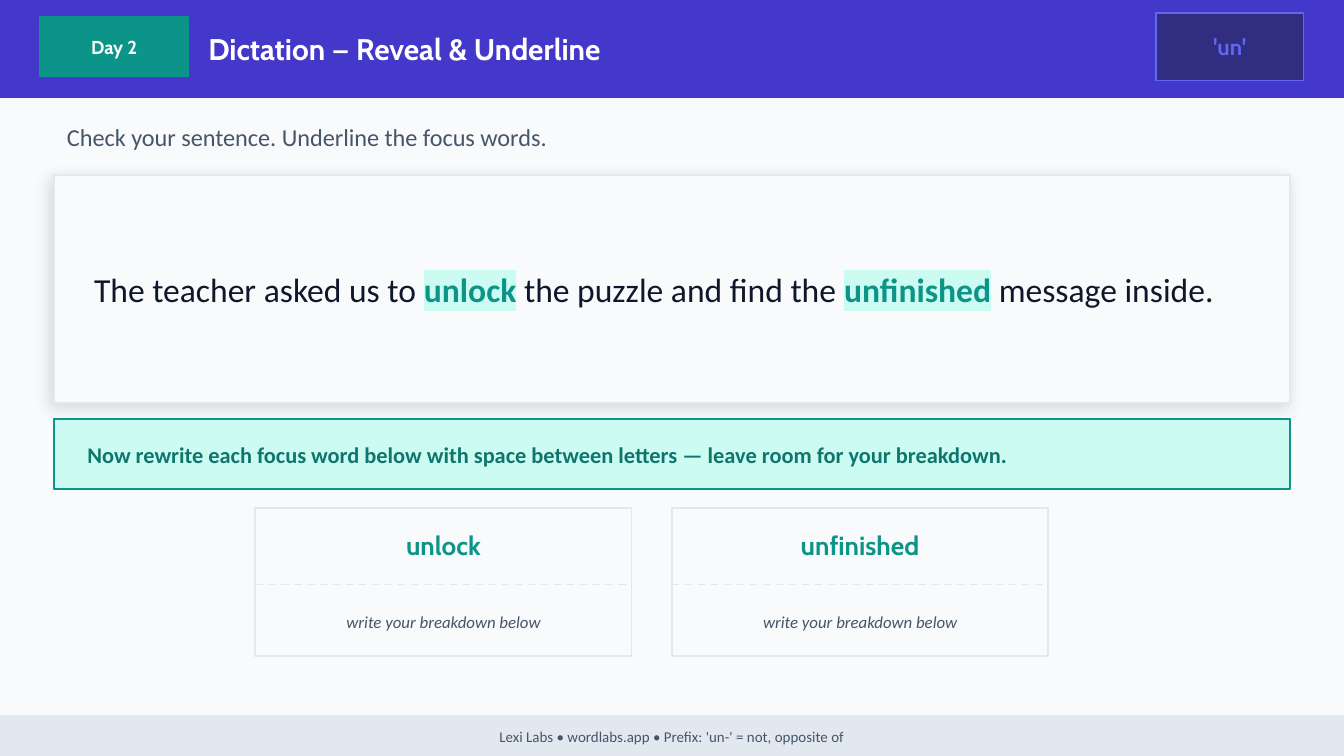
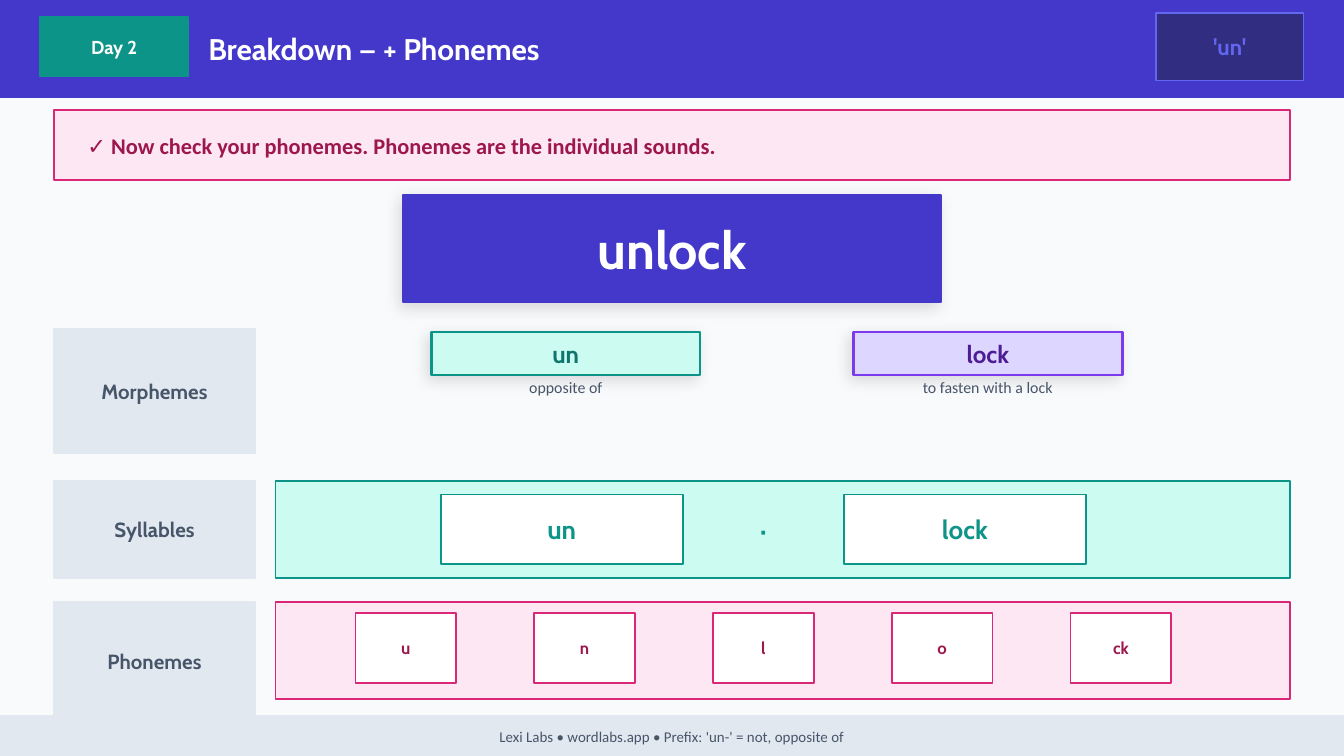
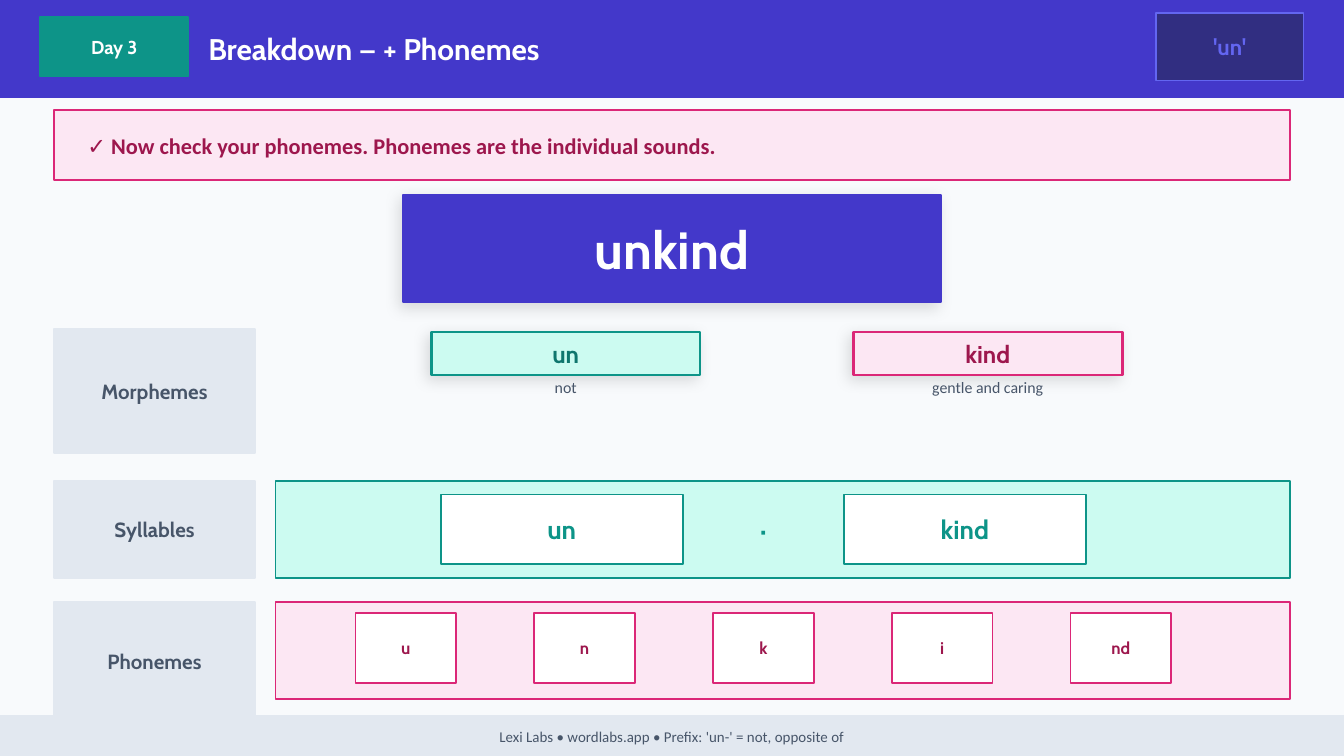
from lxml import etree
from pptx import Presentation
from pptx.dml.color import RGBColor
from pptx.enum import dml, shapes, text
from pptx.oxml import ns
from pptx.util import Inches, Pt

INDIGO = RGBColor(0x43, 0x38, 0xCA)
INDIGO_DARK = RGBColor(0x31, 0x2E, 0x81)
INDIGO_LIGHT = RGBColor(0x63, 0x66, 0xF1)
TEAL = RGBColor(0x0D, 0x94, 0x88)
TEAL_DARK = RGBColor(0x0F, 0x76, 0x6E)
TEAL_PALE = RGBColor(0xCC, 0xFB, 0xF1)
PINK = RGBColor(0xDB, 0x27, 0x77)
PINK_DARK = RGBColor(0x9D, 0x17, 0x4D)
PINK_PALE = RGBColor(0xFC, 0xE7, 0xF3)
VIOLET = RGBColor(0x7C, 0x3A, 0xED)
VIOLET_DARK = RGBColor(0x4C, 0x1D, 0x95)
VIOLET_PALE = RGBColor(0xDD, 0xD6, 0xFE)
INK = RGBColor(0x0F, 0x17, 0x2A)
SLATE = RGBColor(0x47, 0x55, 0x69)
MIST = RGBColor(0xE2, 0xE8, 0xF0)
PAPER = RGBColor(0xF8, 0xFA, 0xFC)
WHITE = RGBColor(0xFF, 0xFF, 0xFF)

HEADING, BODY = "Cabin", "Calibri"
LEFT, WIDTH = 0.4, 9.2
CENTER, START = text.PP_ALIGN.CENTER, text.PP_ALIGN.LEFT

# Each scheme is fill, outline, text
TEAL_SCHEME = (TEAL_PALE, TEAL, TEAL_DARK)
PINK_SCHEME = (PINK_PALE, PINK, PINK_DARK)
VIOLET_SCHEME = (VIOLET_PALE, VIOLET, VIOLET_DARK)


def add_run(paragraph, words, size, color, font=BODY, bold=False, italic=False, highlight=None):
    run = paragraph.add_run()
    run.text = words
    run.font.size = Pt(size)
    run.font.bold = bold
    run.font.italic = italic
    run.font.color.rgb = color
    if highlight is not None:
        mark = etree.Element(ns.qn("a:highlight"))
        etree.SubElement(mark, ns.qn("a:srgbClr"), val=str(highlight))
        run.font.fill._xPr.find(ns.qn("a:solidFill")).addnext(mark)
    run.font.name = font


def set_frame(shape, align=CENTER, inset=0, anchor=text.MSO_ANCHOR.MIDDLE):
    """Prepare the text frame and return its first paragraph."""
    frame = shape.text_frame
    frame.word_wrap = True
    frame.vertical_anchor = anchor
    frame.margin_left = Inches(inset)
    frame.margin_right = frame.margin_top = frame.margin_bottom = 0
    frame.paragraphs[0].alignment = align
    return frame.paragraphs[0]


def add_box(slide, area, fill, outline, weight=1, shadow=False):
    box = slide.shapes.add_shape(shapes.MSO_SHAPE.RECTANGLE, *map(Inches, area))
    box.fill.solid()
    box.fill.fore_color.rgb = fill
    box.line.color.rgb = outline
    box.line.width = Pt(weight)
    box.shadow.inherit = False
    if shadow:
        effects = box._element.spPr.find(ns.qn("a:effectLst"))
        outer = etree.SubElement(effects, ns.qn("a:outerShdw"), blurRad=str(Pt(8)),
                                 dist=str(Pt(3)), dir=str(135 * 60000),
                                 algn="bl", rotWithShape="0")
        black = etree.SubElement(outer, ns.qn("a:srgbClr"), val="000000")
        etree.SubElement(black, ns.qn("a:alpha"), val="12000")
    return box


def add_tile(slide, area, words, scheme, size, weight=1, shadow=False):
    """A filled box with a centred bold heading inside."""
    fill, outline, color = scheme
    tile = add_box(slide, area, fill, outline, weight, shadow)
    add_run(set_frame(tile), words, size, color, HEADING, bold=True)


def add_label(slide, area, words, size, color, font=BODY, bold=False, italic=False,
              align=CENTER, inset=0, anchor=text.MSO_ANCHOR.MIDDLE):
    label = slide.shapes.add_textbox(*map(Inches, area))
    add_run(set_frame(label, align, inset, anchor), words, size, color, font, bold, italic)


def add_prompt(slide, top, words, scheme):
    fill, outline, color = scheme
    prompt = add_box(slide, (LEFT, top, WIDTH, 0.52), fill, outline)
    add_run(set_frame(prompt, START, 0.25), words, 12, color, bold=True)


def add_divider(slide, left, top, width):
    divider = slide.shapes.add_connector(shapes.MSO_CONNECTOR.STRAIGHT, Inches(left),
                                         Inches(top), Inches(left + width), Inches(top))
    divider.line.color.rgb = MIST
    divider.line.width = Pt(1)
    divider.line.dash_style = dml.MSO_LINE.DASH
    etree.SubElement(divider._element.spPr, ns.qn("a:effectLst"))


def centered_lefts(center, width, gap, count):
    """Left edges of equal items spread evenly about a centre."""
    first = center - (count * width + (count - 1) * gap) / 2
    return [first + i * (width + gap) for i in range(count)]


def add_lesson_slide(deck, day, title):
    """A slide with the shared header band and footer."""
    slide = deck.slides.add_slide(deck.slide_layouts[6])
    slide.background.fill.solid()
    slide.background.fill.fore_color.rgb = PAPER
    add_box(slide, (0, 0, 10, 0.72), INDIGO, INDIGO)
    add_tile(slide, (0.3, 0.13, 1.1, 0.44), day, (TEAL, TEAL, WHITE), 10)
    add_label(slide, (1.55, 0, 8.1, 0.72), title, 16, WHITE, HEADING, bold=True, align=START)
    add_tile(slide, (8.6, 0.1, 1.1, 0.5), "'un'", (INDIGO_DARK, INDIGO_LIGHT, INDIGO_LIGHT), 12)
    footer = add_box(slide, (0, 5.33, 10, 0.3), MIST, MIST)
    add_run(set_frame(footer), "Lexi Labs • wordlabs.app • Prefix: 'un-' = not, opposite of",
            8, SLATE)
    return slide


def add_sentence(slide, parts, focus_words):
    panel = add_box(slide, (LEFT, 1.3, WIDTH, 1.7), PAPER, MIST, shadow=True)
    sentence = set_frame(panel, START, 0.3)
    for part in parts:
        if part in focus_words:
            add_run(sentence, part, 18, TEAL, bold=True, highlight=TEAL_PALE)
        else:
            add_run(sentence, part, 18, INK)


def add_word_card(slide, left, word):
    top, width = 3.78, 2.8
    add_box(slide, (left, top, width, 1.1), PAPER, MIST)
    add_divider(slide, left, top + 0.57, width)
    add_label(slide, (left, top, width, 0.55), word, 14, TEAL, HEADING, bold=True)
    add_label(slide, (left, top + 0.6, width, 0.5), "write your breakdown below", 9, SLATE,
              italic=True)


def add_dictation(deck, day, parts, focus_words):
    slide = add_lesson_slide(deck, day, "Dictation — Reveal & Underline")
    add_label(slide, (LEFT, 0.82, WIDTH, 0.4), "Check your sentence. Underline the focus words.",
              13, SLATE, align=START, inset=0.1)
    add_sentence(slide, parts, focus_words)
    add_prompt(slide, 3.12, "Now rewrite each focus word below with space between letters "
               "— leave room for your breakdown.", TEAL_SCHEME)
    for left, word in zip(centered_lefts(4.85, 2.8, 0.3, len(focus_words)), focus_words):
        add_word_card(slide, left, word)


def add_row_label(slide, top, height, words):
    add_tile(slide, (LEFT, top, 1.5, height), words, (MIST, MIST, SLATE), 11)


def add_morphemes(slide, morphemes):
    add_row_label(slide, 2.45, 0.92, "Morphemes")
    lefts = centered_lefts(5.78, 2, 1.14, len(morphemes))
    for left, (morpheme, meaning, scheme) in zip(lefts, morphemes):
        add_tile(slide, (left, 2.47, 2, 0.32), morpheme, scheme, 13, 1.5, shadow=True)
        add_label(slide, (left, 2.81, 2, 0.22), meaning, 8.5, SLATE,
                  anchor=text.MSO_ANCHOR.TOP)


def add_syllables(slide, syllables):
    top, width, gap = 3.58, 1.8, 1.2
    add_row_label(slide, top, 0.72, "Syllables")
    add_box(slide, (2.05, top, 7.55, 0.72), TEAL_PALE, TEAL)
    for i, left in enumerate(centered_lefts(5.68, width, gap, len(syllables))):
        if i:
            add_label(slide, (left - gap, top + 0.1, gap, 0.52), "·", 16, TEAL, HEADING,
                      bold=True)
        add_tile(slide, (left, top + 0.1, width, 0.52), syllables[i], (WHITE, TEAL, TEAL), 14)


def add_phonemes(slide, phonemes):
    top, width = 4.48, 0.75
    add_row_label(slide, top, 0.88, "Phonemes")
    add_box(slide, (2.05, top, 7.55, 0.72), PINK_PALE, PINK)
    for left, sound in zip(centered_lefts(5.68, width, 0.58, len(phonemes)), phonemes):
        add_tile(slide, (left, top + 0.08, width, 0.52), sound, (WHITE, PINK, PINK_DARK), 9)


def add_breakdown(deck, day, word, morphemes, phonemes):
    slide = add_lesson_slide(deck, day, "Breakdown — + Phonemes")
    add_prompt(slide, 0.82, "✓ Now check your phonemes. Phonemes are the individual sounds.",
               PINK_SCHEME)
    add_tile(slide, (3, 1.45, 4, 0.8), word, (INDIGO, INDIGO, WHITE), 28, shadow=True)
    add_morphemes(slide, morphemes)
    add_syllables(slide, [morpheme for morpheme, _, _ in morphemes])
    add_phonemes(slide, phonemes)


def main():
    deck = Presentation()
    deck.slide_width = Inches(10)
    deck.slide_height = deck.slide_width * 9 // 16
    add_dictation(deck, "Day 2",
                  ["The teacher asked us to ", "unlock", " the puzzle and find the ",
                   "unfinished", " message inside."],
                  ["unlock", "unfinished"])
    add_breakdown(deck, "Day 2", "unlock",
                  [("un", "opposite of", TEAL_SCHEME),
                   ("lock", "to fasten with a lock", VIOLET_SCHEME)],
                  ["u", "n", "l", "o", "ck"])
    add_breakdown(deck, "Day 3", "unkind",
                  [("un", "not", TEAL_SCHEME),
                   ("kind", "gentle and caring", PINK_SCHEME)],
                  ["u", "n", "k", "i", "nd"])
    deck.save("out.pptx")


if __name__ == "__main__":
    main()
